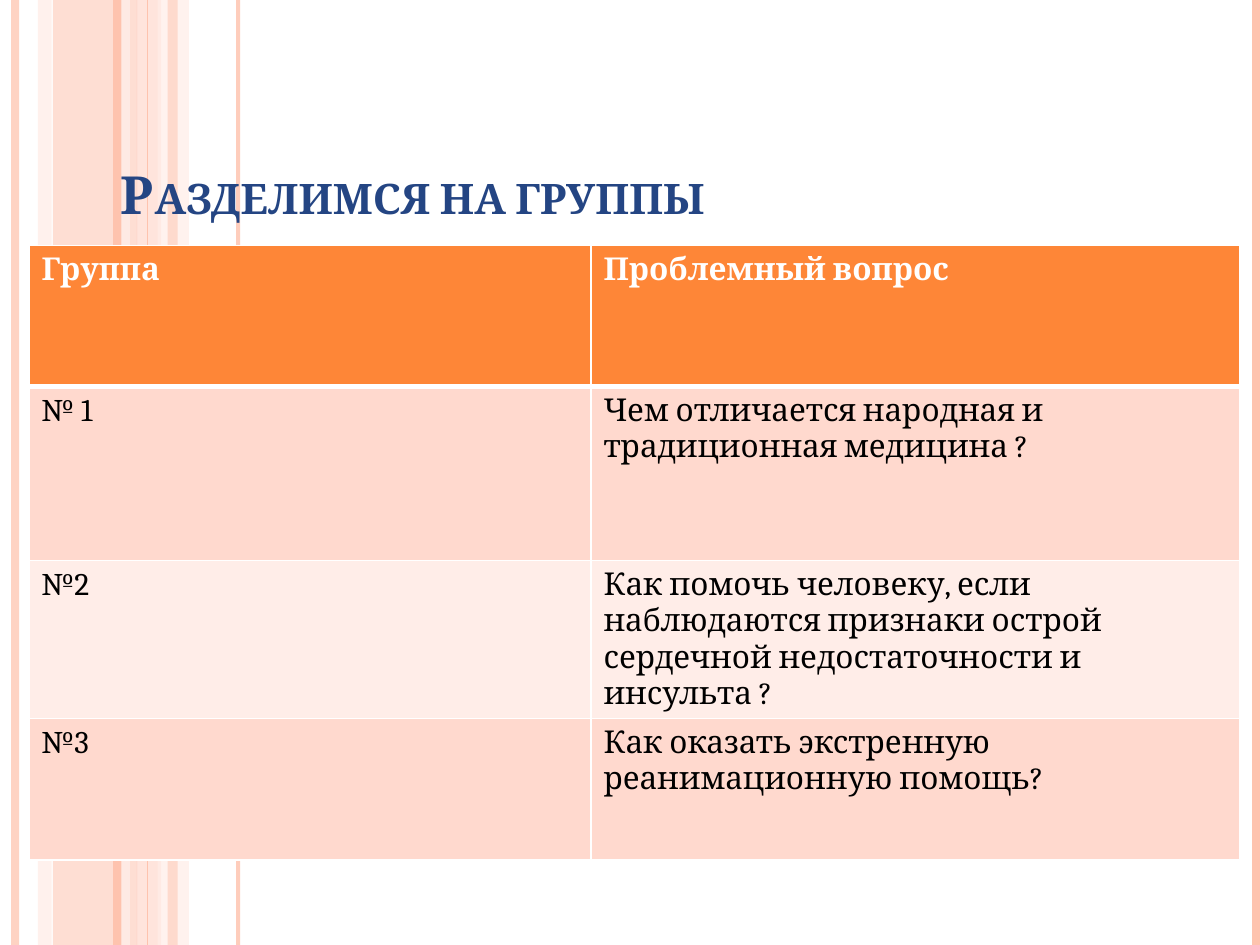
from lxml.etree import SubElement as Sub
from pptx import Presentation
from pptx.dml.color import RGBColor
from pptx.enum.shapes import MSO_CONNECTOR as Link, MSO_SHAPE as Kind
from pptx.enum.text import MSO_ANCHOR as Anchor, MSO_AUTO_SIZE as Auto, PP_ALIGN as Align
from pptx.oxml import parse_xml
from pptx.oxml.ns import nsdecls, qn
from pptx.util import Pt

SCALE = 9144
WIDE, HIGH = 1000, 750
ROSE, PINK, PALE = "FEC3AE", "FFD9CE", "FFEDE8"
ORANGE, NAVY, WHITE, BLACK = "FE8637", "244583", "FFFFFF", "000000"

BANDS = [(42, 67, ROSE, 54), (30, 11, PINK, 36), (108, 20, PINK, 70),
         (125, 25, PALE, 71), (133, 8, ROSE, 51)]
LINES = [(12, 4.5, ROSE, 73), (100, 4.5, PALE, 83), (93, 4.5, ROSE, 100),
         (189, 2.25, ROSE, 82), (117, 0.75, ROSE, 100), (997, 4.5, ROSE, 100)]
COLS = [446, 515]
ROWS = [
    (112, ORANGE, "Группа", "Проблемный вопрос"),
    (138, PINK, "№ 1", "Чем отличается народная и традиционная медицина ?"),
    (125, PALE, "№2", "Как помочь человеку, если наблюдаются признаки острой "
                      "сердечной недостаточности и инсульта ?"),
    (112, PINK, "№3", "Как оказать экстренную реанимационную помощь?"),
]


def px(num):
    return num * SCALE


def paint(fill, tint, clear=100):
    fill.solid()
    fill.fore_color.rgb = RGBColor.from_string(tint)
    if clear < 100:
        color = fill._xPr.find(qn("a:solidFill"))[0]
        Sub(color, qn("a:alpha"), val=str(clear * 1000))


def style(font, tint, **form):
    for key, val in {"name": "Cambria", **form}.items():
        setattr(font, key, val)
    paint(font.fill, tint)


def stripes(slide, left, top, high):
    for x, wide, tint, clear in BANDS:
        band = slide.shapes.add_shape(Kind.RECTANGLE, px(left + x), px(top), px(wide), px(high))
        band.shadow.inherit = False
        band.line.fill.background()
        paint(band.fill, tint, clear)
    for x, thick, tint, clear in LINES:
        spot = px(left + x)
        line = slide.shapes.add_connector(Link.STRAIGHT, spot, px(top), spot, px(top + high))
        line.line.width = Pt(thick)
        paint(line.line.fill, tint, clear)
        Sub(line._element.spPr, qn("a:effectLst"))


def heading(slide, left, top, wide, high):
    title = slide.shapes.title
    place = {"left": left, "top": top, "width": wide, "height": high}
    for key, val in place.items():
        setattr(title, key, px(val))
    frame = title.text_frame
    frame.text = "Разделимся на группы"
    form = {"word_wrap": True, "auto_size": Auto.NONE, "vertical_anchor": Anchor.BOTTOM}
    for key, val in form.items():
        setattr(frame, key, val)
    para = frame.paragraphs[0]
    para.alignment = Align.LEFT
    run = para.runs[0]
    style(run.font, NAVY, size=Pt(30), bold=True)
    run._r.get_or_add_rPr().set("cap", "small")
    slide.shapes._spTree.append(title._element)


def border(cell, sides):
    for spot, (side, thick) in enumerate(sides.items()):
        edge = parse_xml(
            f'<a:ln{side} {nsdecls("a")} w="{Pt(thick)}"><a:solidFill>'
            f'<a:srgbClr val="{WHITE}"/></a:solidFill></a:ln{side}>')
        cell._tc.get_or_add_tcPr().insert(spot, edge)


def groups(slide, left, top):
    wide, high = sum(COLS), sum(row[0] for row in ROWS)
    grid = slide.shapes.add_table(len(ROWS), len(COLS), px(left), px(top), px(wide), px(high)).table
    for col, size in zip(grid.columns, COLS):
        col.width = px(size)
    for r, (tall, tint, *texts) in enumerate(ROWS):
        grid.rows[r].height = px(tall)
        head = r == 0
        for c, text in enumerate(texts):
            cell = grid.cell(r, c)
            cell.text = text
            paint(cell.fill, tint)
            style(cell.text_frame.paragraphs[0].runs[0].font,
                  WHITE if head else BLACK, size=Pt(18), bold=head)
            border(cell, {"L": 1, "R": 1, "T": 3 if r == 1 else 1, "B": 3 if head else 1})


def main():
    deck = Presentation()
    deck.slide_width, deck.slide_height = px(WIDE), px(HIGH)
    slide = deck.slides.add_slide(deck.slide_layouts[5])
    paint(slide.background.fill, WHITE)
    stripes(slide, 0, 0, HIGH)
    heading(slide, 86, 23, 850, 161)
    groups(slide, 23, 195)
    deck.save("out.pptx")


if __name__ == "__main__":
    main()
